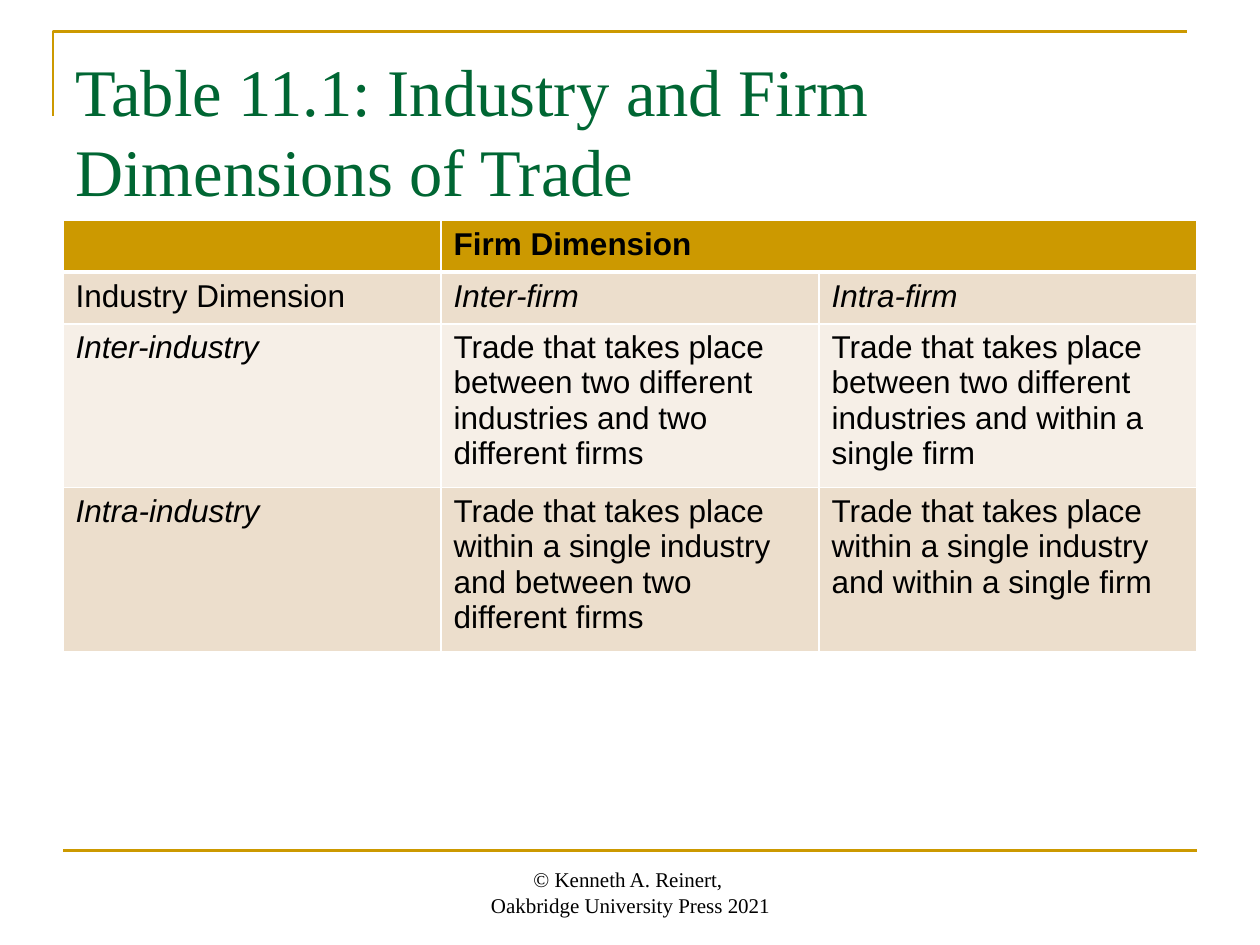
from dataclasses import dataclass

import pptx
import pptx.dml.color
import pptx.enum.text
import pptx.oxml
import pptx.oxml.ns
import pptx.util
from pptx.util import Inches


@dataclass(frozen=True)
class Theme:
    gold: str = "CC9900"
    green: str = "006633"
    black: str = "000000"
    white: str = "FFFFFF"
    tan: str = "ECDECC"
    cream: str = "F6EFE7"
    serif: str = "Times New Roman"
    sans: str = "Arial"
    title_size: int = 38
    table_size: int = 18
    footer_size: int = 12
    rule_width: float = 1.5


theme = Theme()
rgb = pptx.dml.color.RGBColor.from_string
anchors = pptx.enum.text.MSO_ANCHOR


def add_span(para, text, font, size, color, bold=False, italic=False):
    span = para.add_run()
    span.text = text
    span.font.name = font
    span.font.size = pptx.util.Pt(size)
    span.font.color.rgb = rgb(color)
    span.font.bold = bold
    span.font.italic = italic


def add_border(cell, side, width):
    """Draw one white cell edge; call before the cell is filled."""
    cell._tc.get_or_add_tcPr().append(pptx.oxml.parse_xml(
        f'<a:ln{side} {pptx.oxml.ns.nsdecls("a")} w="{pptx.util.Pt(width)}">'
        f'<a:solidFill><a:srgbClr val="{theme.white}"/></a:solidFill></a:ln{side}>'))


deck = pptx.Presentation()
deck.slide_width, deck.slide_height = Inches(10), Inches(7.5)
page = deck.slides.add_slide(deck.slide_layouts[6])

# Corner frame above the title and rule above the footer
builder = page.shapes.build_freeform(Inches(0.42), Inches(0.92))
builder.add_line_segments(
    [(Inches(0.42), Inches(0.25)), (Inches(9.42), Inches(0.25))], close=False)
frame = builder.convert_to_shape()
frame.fill.background()
frame.shadow.inherit = False
rule = page.shapes.add_connector(
    pptx.enum.shapes.MSO_CONNECTOR.STRAIGHT,
    Inches(0.5), Inches(6.75), Inches(9.5), Inches(6.75))
rule._element.spPr.append(
    pptx.oxml.parse_xml(f'<a:effectLst {pptx.oxml.ns.nsdecls("a")}/>'))
for stroke in (frame, rule):
    stroke.line.color.rgb = rgb(theme.gold)
    stroke.line.width = pptx.util.Pt(theme.rule_width)

# Title
title = page.shapes.add_textbox(Inches(0.5), Inches(0.3), Inches(9), Inches(1.25))
title.text_frame.word_wrap = True
title.text_frame.margin_top = Inches(0.1)
add_span(title.text_frame.paragraphs[0],
         "Table 11.1: Industry and Firm Dimensions of Trade",
         theme.serif, theme.title_size, theme.green)

# Table of trade types
rows = [
    ["", "Firm Dimension", ""],
    ["Industry Dimension", "Inter-firm", "Intra-firm"],
    ["Inter-industry",
     "Trade that takes place between two different industries and two different firms",
     "Trade that takes place between two different industries and within a single firm"],
    ["Intra-industry",
     "Trade that takes place within a single industry and between two different firms",
     "Trade that takes place within a single industry and within a single firm"],
]
row_heights = [0.41, 0.41, 1.22, 1.22]
row_fills = [theme.gold, theme.tan, theme.cream, theme.tan]
table = page.shapes.add_table(
    len(rows), 3, Inches(0.5), Inches(1.75), Inches(9), Inches(sum(row_heights))).table
for column in table.columns:
    column.width = Inches(3)
for r, (texts, height, fill) in enumerate(zip(rows, row_heights, row_fills)):
    table.rows[r].height = Inches(height)
    for c, text in enumerate(texts):
        cell = table.cell(r, c)
        for side in "LRTB":
            header_edge = (r, side) in ((0, "B"), (1, "T"))
            add_border(cell, side, 3 if header_edge else 1)
        cell.fill.solid()
        cell.fill.fore_color.rgb = rgb(fill)
        if text:
            is_label = (r == 1) != (c == 0) and r > 0
            add_span(cell.text_frame.paragraphs[0], text, theme.sans,
                     theme.table_size, theme.black, bold=r == 0, italic=is_label)
table.cell(0, 1).merge(table.cell(0, 2))

# Footer
footer = page.shapes.add_textbox(Inches(3.42), Inches(6.83), Inches(3.17), Inches(0.5))
footer.text_frame.word_wrap = True
footer.text_frame.vertical_anchor = anchors.BOTTOM
for i, text in enumerate(["© Kenneth A. Reinert, ", "Oakbridge University Press 2021"]):
    para = footer.text_frame.add_paragraph() if i else footer.text_frame.paragraphs[0]
    para.alignment = pptx.enum.text.PP_ALIGN.CENTER
    add_span(para, text, theme.serif, theme.footer_size, theme.black)

deck.save("out.pptx")
